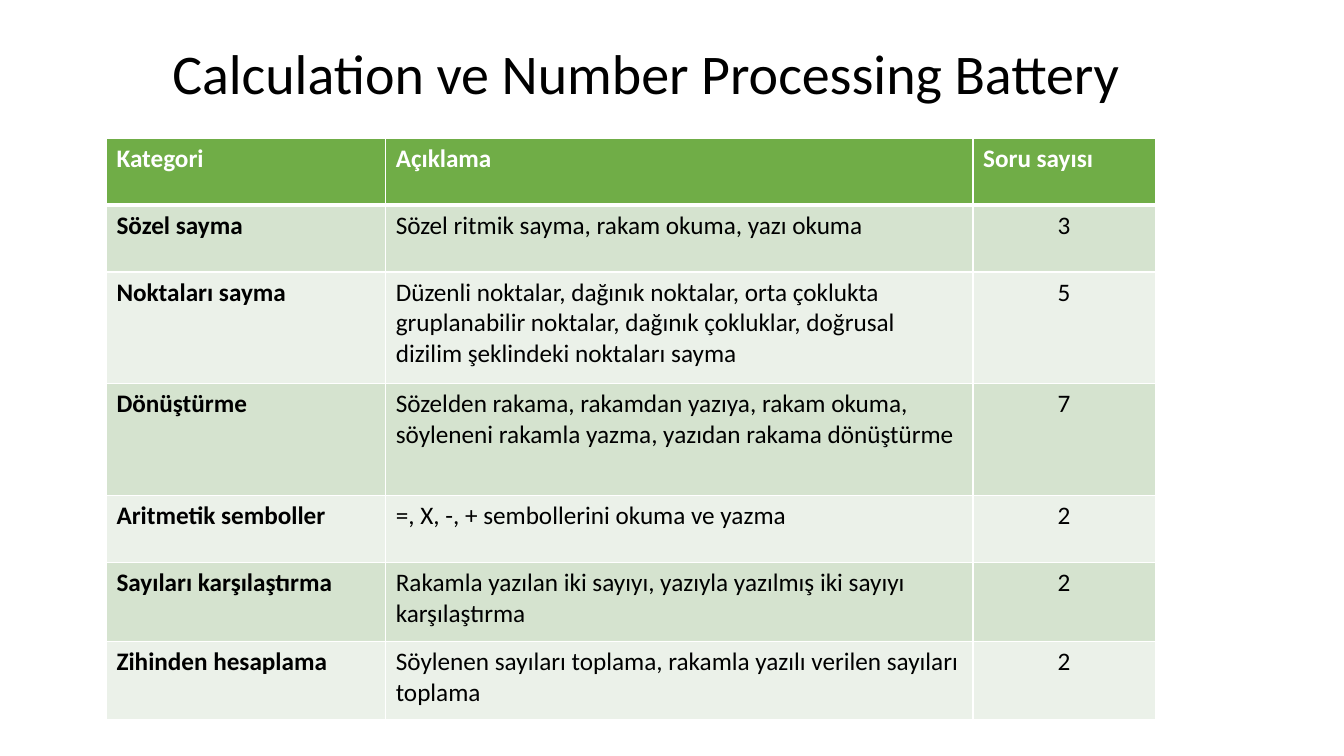
import pptx
import pptx.dml.color
import pptx.enum.text
import pptx.oxml
import pptx.oxml.ns
import pptx.util

ALIGN = pptx.enum.text.PP_ALIGN
ANCHOR = pptx.enum.text.MSO_ANCHOR

HEADER = ("Kategori", "Açıklama", "Soru sayısı")
CATEGORIES = [
    ("Sözel sayma", "Sözel ritmik sayma, rakam okuma, yazı okuma", 3),
    ("Noktaları sayma",
     "Düzenli noktalar, dağınık noktalar, orta çoklukta gruplanabilir noktalar, "
     "dağınık çokluklar, doğrusal dizilim şeklindeki noktaları sayma", 5),
    ("Dönüştürme",
     "Sözelden rakama, rakamdan yazıya, rakam okuma, söyleneni rakamla yazma, "
     "yazıdan rakama dönüştürme", 7),
    ("Aritmetik semboller", "=, X, -, + sembollerini okuma ve yazma", 2),
    ("Sayıları karşılaştırma",
     "Rakamla yazılan iki sayıyı, yazıyla yazılmış iki sayıyı karşılaştırma", 2),
    ("Zihinden hesaplama",
     "Söylenen sayıları toplama, rakamla yazılı verilen sayıları toplama", 2),
]


def rgb(value):
    return pptx.dml.color.RGBColor.from_string(value)


class Deck:
    """Style and current slide; lengths are percentages of the slide's size."""
    font = "Calibri"
    black, white, green = "000000", "FFFFFF", "70AD47"
    bands = ("D5E3CF", "EBF1E9")

    def __init__(self):
        self.prs = pptx.Presentation()
        self.prs.slide_width = pptx.util.Inches(13.33)
        self.prs.slide_height = pptx.util.Inches(7.5)
        self.s = self.prs.slides.add_slide(self.prs.slide_layouts[5])

    def x(self, share):
        return round(self.prs.slide_width * share / 100)

    def y(self, share):
        return round(self.prs.slide_height * share / 100)

    def format(self, p, size, color, bold=False, align=ALIGN.LEFT):
        p.alignment = align
        for r in p.runs:
            r.font.name = self.font
            r.font.size = pptx.util.Pt(size)
            r.font.bold = bold
            r.font.color.rgb = rgb(color)

    def title(self, text, left, top, width, height):
        sp = self.s.shapes.title
        sp.left, sp.top = self.x(left), self.y(top)
        sp.width, sp.height = self.x(width), self.y(height)
        tf = sp.text_frame
        tf.text = text
        tf.word_wrap = True
        tf.vertical_anchor = ANCHOR.MIDDLE
        p = tf.paragraphs[0]
        p.line_spacing = 0.9
        self.format(p, 40, self.black, align=ALIGN.CENTER)

    def borders(self, cell, **widths):
        tcPr = cell._tc.get_or_add_tcPr()
        for i, side in enumerate("LRTB"):
            width = pptx.util.Pt(widths.get(side, 1))
            line = pptx.oxml.parse_xml(
                f'<a:ln{side} {pptx.oxml.ns.nsdecls("a")} w="{width}"><a:solidFill>'
                f'<a:srgbClr val="{self.white}"/></a:solidFill></a:ln{side}>')
            tcPr.insert(i, line)

    def table(self, rows, left, top, col_widths, row_heights):
        frame = self.s.shapes.add_table(
            len(rows), len(col_widths), self.x(left), self.y(top),
            self.x(sum(col_widths)), self.y(sum(row_heights)))
        table = frame.table
        for col, width in zip(table.columns, col_widths):
            col.width = self.x(width)
        for row, height in zip(table.rows, row_heights):
            row.height = self.y(height)
        for i, values in enumerate(rows):
            head = i == 0
            for j, value in enumerate(values):
                cell = table.cell(i, j)
                cell.text = str(value)
                cell.fill.solid()
                cell.fill.fore_color.rgb = rgb(self.green if head else self.bands[(i - 1) % 2])
                # The thick rule under the header is shared with the first body row
                self.borders(cell, B=3 if head else 1, T=3 if i == 1 else 1)
                self.format(cell.text_frame.paragraphs[0], 18,
                            self.white if head else self.black,
                            bold=head or j == 0,
                            align=ALIGN.CENTER if j == 2 and not head else ALIGN.LEFT)


def main():
    deck = Deck()
    # Title
    deck.title("Calculation ve Number Processing Battery ", 3.98, 2.93, 89.1, 14.27)
    # Test categories
    short, medium, tall = 8.86, 10.4, 14.8
    deck.table([HEADER] + CATEGORIES, 7.92, 18.27, (20.78, 43.7, 13.55),
               (short, short, tall, tall, short, medium, medium))
    deck.prs.save("out.pptx")


if __name__ == "__main__":
    main()
